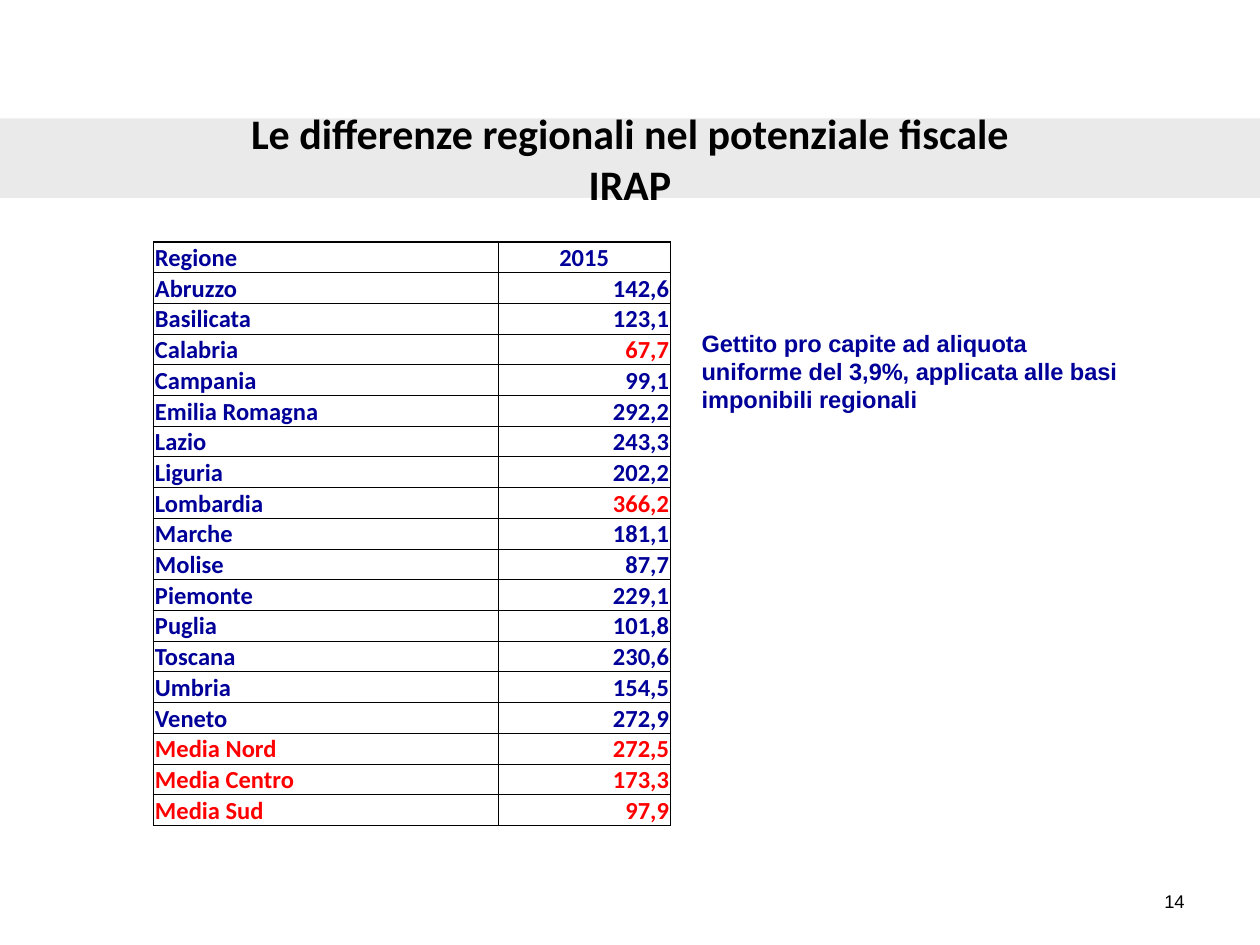
import lxml.etree
import pptx
import pptx.dml.color
import pptx.enum.text
import pptx.oxml.ns
import pptx.util

Inches = pptx.util.Inches
Pt = pptx.util.Pt
ALIGN = pptx.enum.text.PP_ALIGN
MIDDLE = pptx.enum.text.MSO_ANCHOR.MIDDLE

BLACK = pptx.dml.color.RGBColor(0x00, 0x00, 0x00)
NAVY = pptx.dml.color.RGBColor(0x00, 0x00, 0x99)
RED = pptx.dml.color.RGBColor(0xFF, 0x00, 0x00)
BAND_GREY = pptx.dml.color.RGBColor(0xEA, 0xEA, 0xEA)

REVENUES = [
    ("Abruzzo", "142,6"), ("Basilicata", "123,1"), ("Calabria", "67,7"),
    ("Campania", "99,1"), ("Emilia Romagna", "292,2"), ("Lazio", "243,3"),
    ("Liguria", "202,2"), ("Lombardia", "366,2"), ("Marche", "181,1"),
    ("Molise", "87,7"), ("Piemonte", "229,1"), ("Puglia", "101,8"),
    ("Toscana", "230,6"), ("Umbria", "154,5"), ("Veneto", "272,9"),
    ("Media Nord", "272,5"), ("Media Centro", "173,3"), ("Media Sud", "97,9"),
]
EXTREMES = ("Calabria", "Lombardia")


def add_run(paragraph, text, size, font, color, bold=True):
    """Append one formatted run to a paragraph."""
    run = paragraph.add_run()
    run.text = text
    run.font.size = Pt(size)
    run.font.name = font
    run.font.bold = bold
    run.font.color.rgb = color


def place_title(slide, left, top, width, height):
    """Turn the title placeholder into a full-width grey band."""
    title = slide.shapes.title
    title.left, title.top, title.width, title.height = left, top, width, height
    title.fill.solid()
    title.fill.fore_color.rgb = BAND_GREY
    frame = title.text_frame
    frame.auto_size = pptx.enum.text.MSO_AUTO_SIZE.NONE
    frame.vertical_anchor = MIDDLE
    heading = frame.paragraphs[0]
    heading.alignment = ALIGN.CENTER
    add_run(heading, "Le differenze regionali nel potenziale fiscale", 24, "Calibri", BLACK)
    heading.add_line_break()
    add_run(heading, "IRAP", 24, "Calibri", BLACK)


def place_text(slide, left, top, width, height, text, size, color, bold, align):
    """Place a wrapped, vertically centred Arial text box."""
    frame = slide.shapes.add_textbox(left, top, width, height).text_frame
    frame.word_wrap = True
    frame.vertical_anchor = MIDDLE
    paragraph = frame.paragraphs[0]
    paragraph.alignment = align
    add_run(paragraph, text, size, "Arial", color, bold)


def set_borders(cell, widths):
    """Draw black cell borders, given the width in points of each side."""
    properties = cell._tc.get_or_add_tcPr()
    qn = pptx.oxml.ns.qn
    for side in "LRTB":
        line = lxml.etree.SubElement(properties, qn(f"a:ln{side}"), w=str(Pt(widths[side])))
        fill = lxml.etree.SubElement(line, qn("a:solidFill"))
        lxml.etree.SubElement(fill, qn("a:srgbClr"), val=str(BLACK))


def fill_cell(cell, text, color, align, widths):
    """Write and format one table cell."""
    cell.margin_left = cell.margin_right = cell.margin_top = Inches(0.01)
    cell.margin_bottom = 0
    cell.vertical_anchor = MIDDLE
    set_borders(cell, widths)
    cell.fill.background()
    paragraph = cell.text_frame.paragraphs[0]
    paragraph.alignment = align
    add_run(paragraph, text, 14, "Calibri", color)


def place_revenue_table(slide, left, top, width, height):
    """Place the table of regional revenues with a thicker outer frame."""
    rows = [("Regione", "2015")] + REVENUES
    table = slide.shapes.add_table(len(rows), 2, left, top, width, height).table
    table.first_row = table.horz_banding = False
    table.columns[0].width = int(width * 2 / 3)
    table.columns[1].width = width - table.columns[0].width
    for index, (region, revenue) in enumerate(rows):
        table.rows[index].height = height // len(rows)
        is_average = region.startswith("Media")
        region_color = RED if is_average else NAVY
        revenue_color = RED if is_average or region in EXTREMES else NAVY
        revenue_align = ALIGN.CENTER if index == 0 else ALIGN.RIGHT
        edges = {"T": 1 if index == 0 else 0.5, "B": 1 if index == len(rows) - 1 else 0.5}
        fill_cell(table.cell(index, 0), region, region_color, ALIGN.LEFT,
                  {"L": 1, "R": 0.5, **edges})
        fill_cell(table.cell(index, 1), revenue, revenue_color, revenue_align,
                  {"L": 0.5, "R": 1, **edges})


def main():
    """Build and save the slide."""
    deck = pptx.Presentation()
    deck.slide_width, deck.slide_height = Inches(10), Inches(7.5)
    slide = deck.slides.add_slide(deck.slide_layouts[5])
    place_title(slide, 0, Inches(0.94), deck.slide_width, Inches(0.63))
    place_text(slide, Inches(7.17), Inches(6.95), Inches(2.33), Inches(0.4),
               "14", 10.5, BLACK, False, ALIGN.RIGHT)
    place_revenue_table(slide, Inches(1.22), Inches(1.92), Inches(4.1), Inches(4.58))
    place_text(slide, Inches(5.47), Inches(2.63), Inches(3.62), Inches(0.63),
               "Gettito pro capite ad aliquota uniforme del 3,9%, "
               "applicata alle basi imponibili regionali",
               13.5, NAVY, True, ALIGN.LEFT)
    deck.save("out.pptx")


if __name__ == "__main__":
    main()
